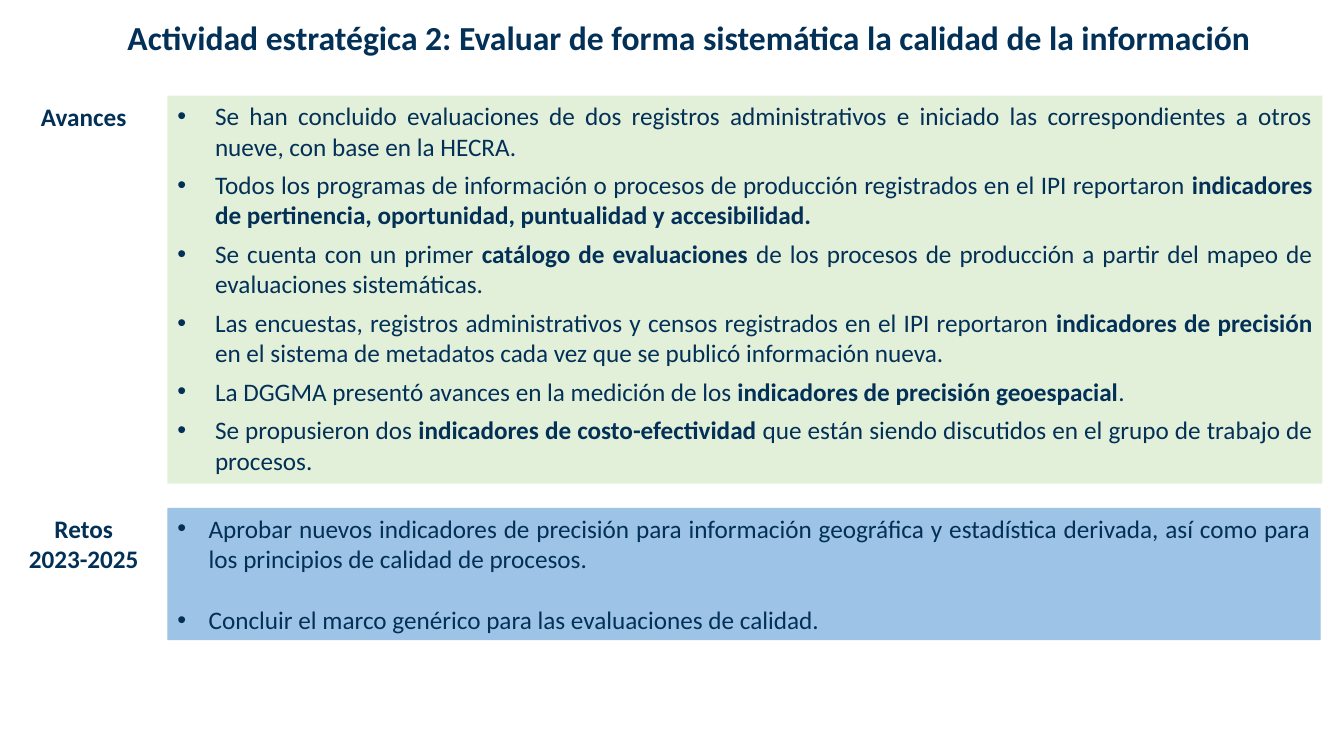
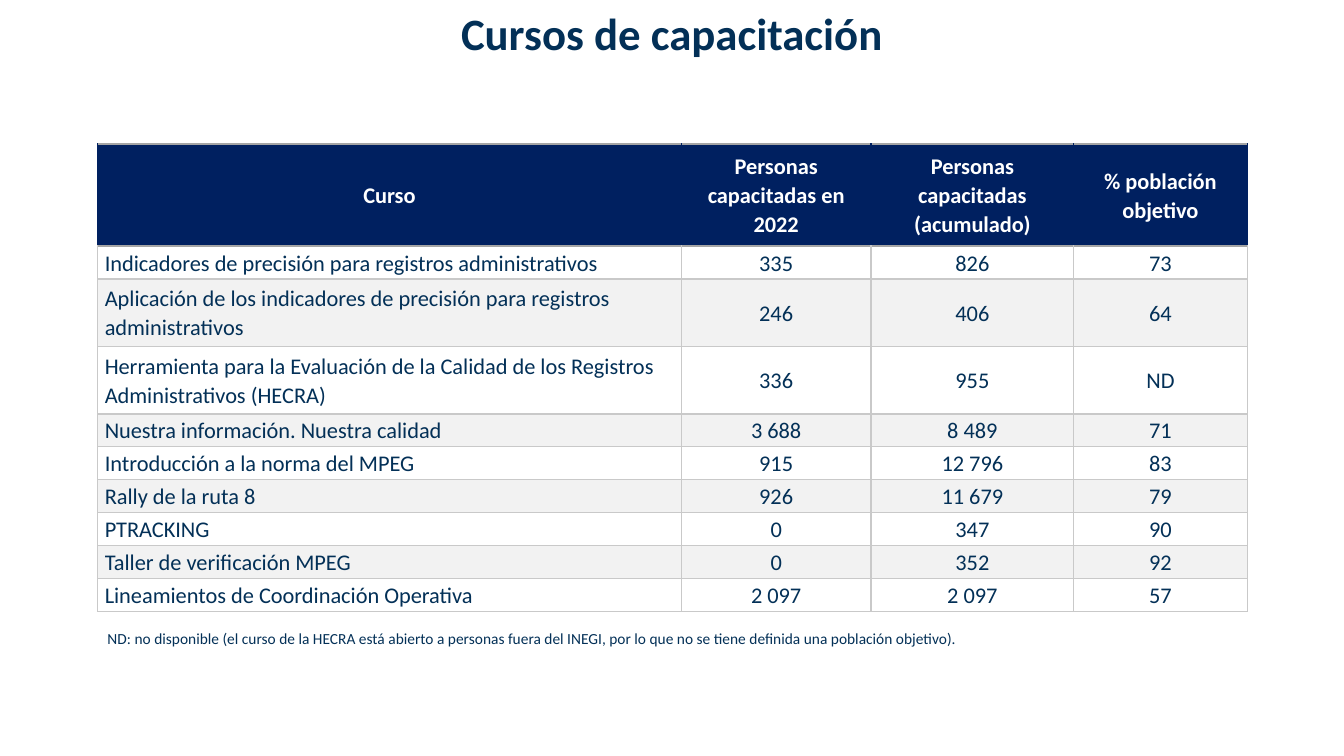
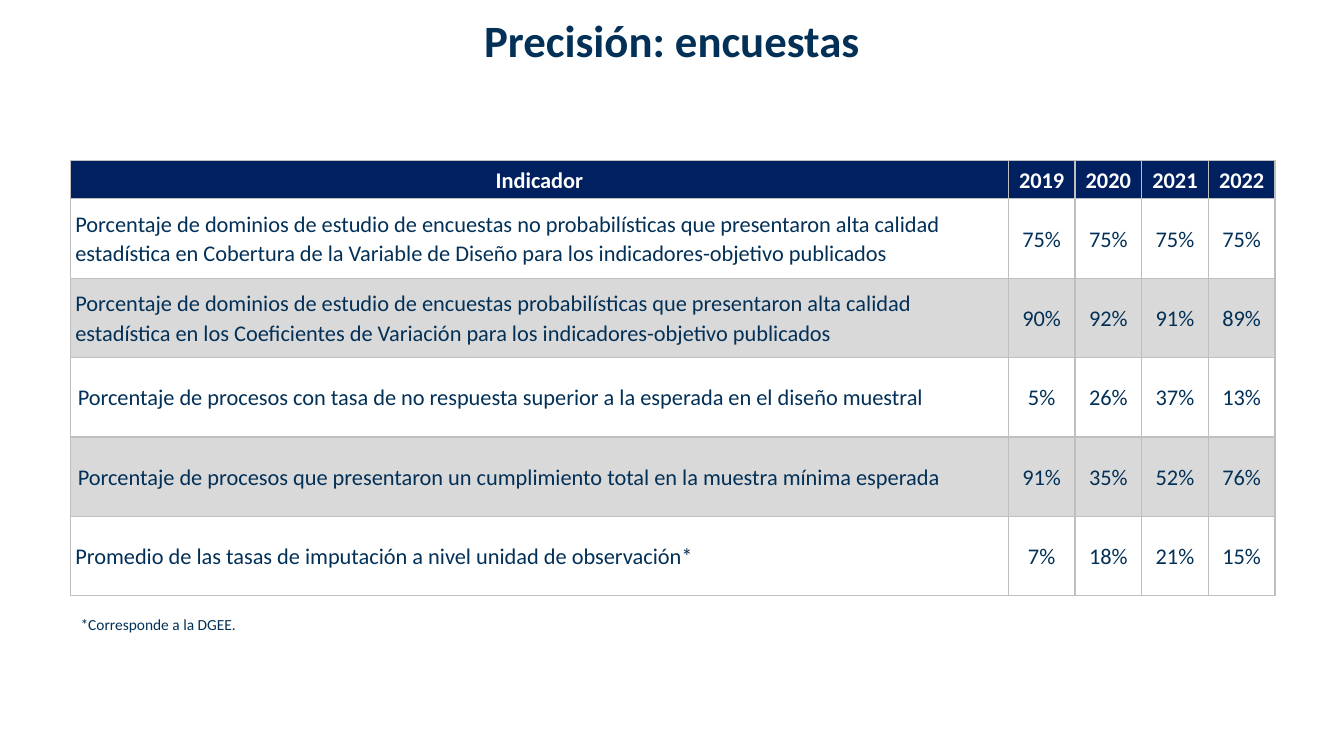
from lxml import etree
from pptx import Presentation
from pptx.dml.color import RGBColor
from pptx.enum.shapes import MSO_SHAPE
from pptx.enum.text import MSO_ANCHOR, PP_ALIGN
from pptx.oxml.ns import qn
from pptx.util import Cm, Pt

RECTANGLE = MSO_SHAPE.RECTANGLE
TOP, MIDDLE = MSO_ANCHOR.TOP, MSO_ANCHOR.MIDDLE
LEFT, CENTER, JUSTIFY = PP_ALIGN.LEFT, PP_ALIGN.CENTER, PP_ALIGN.JUSTIFY

FONT = "Calibri"
INK, NAVY, WHITE = "033057", "002060", "FFFFFF"
GREEN, BLUE = "E2F0D9", "9DC3E6"
SLIDE_WIDTH, SLIDE_HEIGHT = 33.87, 19.05
LABEL_WIDTH = 4.22

ADVANCES = [
    "Se han concluido evaluaciones de dos registros administrativos e iniciado las "
    "correspondientes a otros nueve, con base en la HECRA.",
    "Todos los programas de información o procesos de producción registrados en el IPI "
    "reportaron **indicadores de pertinencia, oportunidad, puntualidad y accesibilidad.**",
    "Se cuenta con un primer **catálogo de evaluaciones **de los procesos de producción "
    "a partir del mapeo de evaluaciones sistemáticas.",
    "Las encuestas, registros administrativos y censos registrados en el IPI reportaron "
    "**indicadores de precisión **en el sistema de metadatos cada vez que se publicó "
    "información nueva.",
    "La DGGMA presentó avances en la medición de los "
    "**indicadores de precisión geoespacial**.",
    "Se propusieron dos **indicadores de costo-efectividad **que están siendo discutidos "
    "en el grupo de trabajo de procesos.",
]
CHALLENGES = [
    "Aprobar nuevos indicadores de precisión para información geográfica y estadística "
    "derivada, así como para los principios de calidad de procesos.",
    "Concluir el marco genérico para las evaluaciones de calidad.",
]
COURSES = [
    ("Curso", "Personas capacitadas en 2022", "Personas capacitadas (acumulado)",
     "% población objetivo"),
    ("Indicadores de precisión para registros administrativos", "335", "826", "73"),
    ("Aplicación de los indicadores de precisión para registros administrativos",
     "246", "406", "64"),
    ("Herramienta para la Evaluación de la Calidad de los Registros Administrativos (HECRA)",
     "336", "955", "ND"),
    ("Nuestra información. Nuestra calidad", "3 688", "8 489", "71"),
    ("Introducción a la norma del MPEG", "915", "12 796", "83"),
    ("Rally de la ruta 8", "926", "11 679", "79"),
    ("PTRACKING", "0", "347", "90"),
    ("Taller de verificación MPEG", "0", "352", "92"),
    ("Lineamientos de Coordinación Operativa", "2 097", "2 097", "57"),
]
SURVEYS = [
    ("Indicador", "2019", "2020", "2021", "2022"),
    ("Porcentaje de dominios de estudio de encuestas no probabilísticas que presentaron "
     "alta calidad estadística en Cobertura de la Variable de Diseño para los "
     "indicadores-objetivo publicados", "75%", "75%", "75%", "75%"),
    ("Porcentaje de dominios de estudio de encuestas probabilísticas que presentaron "
     "alta calidad estadística en los Coeficientes de Variación para los "
     "indicadores-objetivo publicados", "90%", "92%", "91%", "89%"),
    ("Porcentaje de procesos con tasa de no respuesta superior a la esperada en el "
     "diseño muestral", "5%", "26%", "37%", "13%"),
    ("Porcentaje de procesos que presentaron un cumplimiento total en la muestra mínima "
     "esperada", "91%", "35%", "52%", "76%"),
    ("Promedio de las tasas de imputación a nivel unidad de observación*",
     "7%", "18%", "21%", "15%"),
]


def rgb(value):
    return RGBColor.from_string(value)


def style(paragraph, size, color=INK, bold=False, align=LEFT):
    paragraph.alignment = align
    font = paragraph.font
    font.name, font.size, font.bold = FONT, Pt(size), bold
    font.color.rgb = rgb(color)


def add_text(slide, lines, left, top, width, height, size, bold=False, align=LEFT):
    frame = slide.shapes.add_textbox(Cm(left), Cm(top), Cm(width), Cm(height)).text_frame
    frame.word_wrap = True
    frame.text = lines
    for paragraph in frame.paragraphs:
        style(paragraph, size, bold=bold, align=align)
    return frame


def add_title(slide, text, top, size, left=0):
    frame = add_text(slide, text, left, top, SLIDE_WIDTH, 1.6, size, True, CENTER)
    frame.paragraphs[0].line_spacing = 0.9


def add_label(slide, text, top, height):
    add_text(slide, text, 0, top, LABEL_WIDTH, height, 18, True, CENTER)


def add_bullet(paragraph, indent):
    properties = paragraph._p.get_or_add_pPr()
    properties.set("marL", str(Cm(indent)))
    properties.set("indent", str(-Cm(indent)))
    etree.SubElement(properties, qn("a:buFont"), typeface="Arial")
    etree.SubElement(properties, qn("a:buChar"), char="•")


def add_panel(slide, items, top, width, height, fill, indent, gap):
    panel = slide.shapes.add_shape(
        RECTANGLE, Cm(LABEL_WIDTH), Cm(top), Cm(width), Cm(height))
    panel.shadow.inherit = False
    panel.fill.solid()
    panel.fill.fore_color.rgb = rgb(fill)
    panel.line.fill.background()
    frame = panel.text_frame
    frame.word_wrap = True
    frame.vertical_anchor = TOP
    for index, item in enumerate(items):
        paragraph = frame.add_paragraph() if index else frame.paragraphs[0]
        add_bullet(paragraph, indent)
        style(paragraph, 18, align=JUSTIFY)
        if index:
            paragraph.space_before = Pt(gap)
        for part, text in enumerate(item.split("**")):
            if text:
                run = paragraph.add_run()
                run.text = text
                if part % 2:
                    run.font.bold = True


def set_borders(cell, **colors):
    properties = cell._tc.get_or_add_tcPr()
    for side in "LRTB":
        line = etree.SubElement(properties, qn(f"a:ln{side}"), w=str(Pt(1)))
        fill = etree.SubElement(line, qn("a:solidFill"))
        etree.SubElement(fill, qn("a:srgbClr"), val=colors[side])


def fill_cell(cell, text, inset, fill, color, bold, align):
    cell.margin_left = cell.margin_right = Cm(inset)
    cell.margin_top = cell.margin_bottom = 0
    cell.vertical_anchor = MIDDLE
    if fill:
        cell.fill.solid()
        cell.fill.fore_color.rgb = rgb(fill)
    else:
        cell.fill.background()
    paragraph = cell.text_frame.paragraphs[0]
    paragraph.text = text
    paragraph.line_spacing = 1.07
    style(paragraph, 16, color, bold, align)


def add_data_table(slide, rows, left, top, widths, heights, insets, band, grid,
                   header_edge, header_divider):
    table = slide.shapes.add_table(
        len(rows), len(widths), Cm(left), Cm(top),
        Cm(sum(widths)), Cm(sum(heights))).table
    table.first_row = table.horz_banding = False
    for column, width in zip(table.columns, widths):
        column.width = Cm(width)
    for r, (values, height, inset) in enumerate(zip(rows, heights, insets)):
        table.rows[r].height = Cm(height)
        header = r == 0
        side = header_divider if header else grid
        upper = header_edge if r < 2 else grid
        lower = header_edge if header else grid
        fill = NAVY if header else (None if r % 2 else band)
        for c, value in enumerate(values):
            cell = table.cell(r, c)
            set_borders(cell, L=side, R=side, T=upper, B=lower)
            fill_cell(cell, value, inset, fill, WHITE if header else INK, header,
                      CENTER if header or c else LEFT)


def build_activity(slide):
    add_panel(slide, CHALLENGES, 12.8, 29.06, 3.33, BLUE, 0.79, 22)
    add_panel(slide, ADVANCES, 2.41, 29.11, 9.78, GREEN, 0.95, 6)
    add_label(slide, "Avances", 2.44, 1.02)
    add_label(slide, "Retos\n2023-2025", 12.8, 1.8)
    add_title(slide, "Actividad estratégica 2: Evaluar de forma sistemática la calidad "
              "de la información", 0.41, 24, 0.43)


def build_courses(slide):
    add_title(slide, "Cursos de capacitación", 0.18, 32)
    add_data_table(slide, COURSES, 2.46, 3.63, [14.71, 4.78, 5.11, 4.37],
                   [2.57, 0.83, 1.7, 1.7] + [0.83] * 6, [0.18] * 10,
                   "F2F2F2", "C9C9C9", "A5A5A5", NAVY)
    add_text(slide, "ND: no disponible (el curso de la HECRA está abierto a personas fuera "
             "del INEGI, por lo que no se tiene definida una población objetivo).",
             2.46, 15.72, 22.38, 0.74, 11)


def build_surveys(slide):
    add_title(slide, "Precisión: encuestas", 0.36, 32)
    add_data_table(slide, SURVEYS, 1.78, 4.04, [23.63] + [1.68] * 4,
                   [0.97] + [2] * 5, [0.12] * 3 + [0.18] * 2 + [0.12],
                   "D9D9D9", "BFBFBF", "BFBFBF", "BFBFBF")
    add_text(slide, "*Corresponde a la DGEE.", 1.78, 15.37, 17.22, 0.74, 11)


def main():
    deck = Presentation()
    deck.slide_width, deck.slide_height = Cm(SLIDE_WIDTH), Cm(SLIDE_HEIGHT)
    blank = deck.slide_layouts[6]
    for build in (build_activity, build_courses, build_surveys):
        build(deck.slides.add_slide(blank))
    deck.save("out.pptx")


if __name__ == "__main__":
    main()
